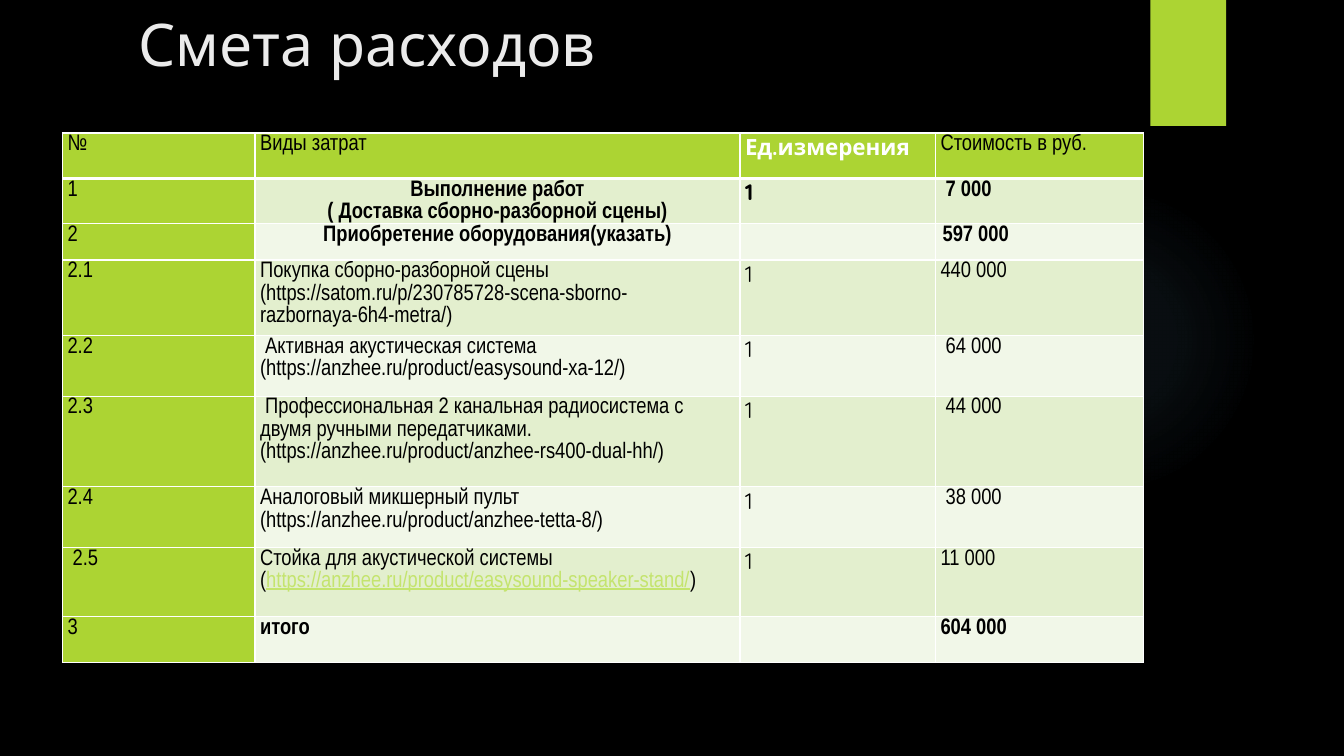
"""Builds the slide with the cost estimate for a portable stage."""
from dataclasses import dataclass
from typing import Any

from lxml import etree
from pptx import Presentation
from pptx import util as u
from pptx.dml.color import RGBColor
from pptx.enum import shapes, text
from pptx.oxml import ns, parse_xml

BLACK = RGBColor(0x00, 0x00, 0x00)
WHITE = RGBColor(0xFF, 0xFF, 0xFF)
TITLE_GREY = RGBColor(0xEB, 0xEB, 0xEB)
LIME = RGBColor(0xAC, 0xD4, 0x33)
LINK_LIME = RGBColor(0xC4, 0xE4, 0x6E)
BANDS = (RGBColor(0xE3, 0xEF, 0xCE), RGBColor(0xF1, 0xF7, 0xE8))
GLOW = RGBColor(0x7A, 0xC4, 0xF0)
GLOW_STOPS = ((0, 7), (36, 6), (69, 0))

WIDTH, HEIGHT = u.Inches(13.33), u.Inches(7.5)
COLUMNS = (14.33, 36.08, 14.55, 15.45)
NARROW, ROUND = "Arial Narrow", "Quicksand"


@dataclass(frozen=True)
class Area:
    """A place on the slide, in percent of its width and height."""

    left: float
    top: float
    width: float
    height: float

    def box(self) -> tuple[int, int, int, int]:
        """Return left, top, width and height as lengths."""
        return across(self.left), down(self.top), across(self.width), down(self.height)


@dataclass(frozen=True)
class Cost:
    """One row of the estimate, its height in percent of the slide."""

    height: float
    number: str
    purpose: str
    unit: str
    price: str
    bold: bool = False
    centred: bool = False
    inset: float = 0.38
    link: str = ""


HEADER = Cost(6, "№", "Виды затрат", "Ед.измерения", "Стоимость в руб.")
COSTS = (
    Cost(6, "1", "Выполнение работ\n( Доставка сборно-разборной сцены)", "1", " 7 000",
         bold=True, centred=True),
    Cost(4.8, "2", "Приобретение оборудования(указать)", "", "597 000",
         bold=True, centred=True, inset=0.53),
    Cost(10, "2.1", "Покупка сборно-разборной сцены\n"
         "(https://satom.ru/p/230785728-scena-sborno-razbornaya-6h4-metra/)", "1", "440 000"),
    Cost(8, "2.2", " Активная акустическая система "
         "(https://anzhee.ru/product/easysound-xa-12/)", "1", " 64 000"),
    Cost(12, "2.3", " Профессиональная 2 канальная радиосистема с двумя ручными "
         "передатчиками. (https://anzhee.ru/product/anzhee-rs400-dual-hh/)", "1", " 44 000"),
    Cost(8, "2.4", "Аналоговый микшерный пульт "
         "(https://anzhee.ru/product/anzhee-tetta-8/)", "1", " 38 000"),
    Cost(9.2, " 2.5", "Стойка для акустической системы\n"
         "(https://anzhee.ru/product/easysound-speaker-stand/)", "1", "11 000",
         link="https://anzhee.ru/product/easysound-speaker-stand/"),
    Cost(6, "3", "итого", "", "604 000", bold=True),
)
GLOW_AREA = Area(70.59, 24.4, 23.11, 41.07)
TAB_AREA = Area(85.6, 0, 5.63, 16.67)
TITLE_AREA = Area(9.53, 0.4, 70.67, 18.8)
ESTIMATE_AREA = Area(4.65, 17.6, sum(COLUMNS), sum(c.height for c in (HEADER, *COSTS)))


def across(percent: float) -> int:
    """Turn a share of the slide's width into a length."""
    return round(WIDTH * percent / 100)


def down(percent: float) -> int:
    """Turn a share of the slide's height into a length."""
    return round(HEIGHT * percent / 100)


def apply(target: Any, values: dict[str, Any]) -> None:
    """Set each named attribute on the target."""
    for name, value in values.items():
        setattr(target, name, value)


def add_run(paragraph: Any, words: str, color: RGBColor, **values: Any) -> None:
    """Add a run with its font values."""
    run = paragraph.add_run()
    run.text = words
    apply(run.font, values)
    run.font.color.rgb = color


def add_decor(slide: Any, kind: Any, area: Area) -> Any:
    """Add a lime shape without line or shadow."""
    decor = slide.shapes.add_shape(kind, *area.box())
    decor.shadow.inherit = False
    decor.fill.solid()
    decor.fill.fore_color.rgb = LIME
    decor.line.fill.background()
    return decor


def add_glow(slide: Any) -> None:
    """Add the faint round glow at the right."""
    glow = add_decor(slide, shapes.MSO_SHAPE.OVAL, GLOW_AREA)
    stops = "".join(
        f'<a:gs pos="{place * 1000}"><a:srgbClr val="{GLOW}">'
        f'<a:alpha val="{alpha * 1000}"/></a:srgbClr></a:gs>'
        for place, alpha in GLOW_STOPS)
    gradient = parse_xml(
        f'<a:gradFill {ns.nsdecls("a")}><a:gsLst>{stops}</a:gsLst><a:path path="circle">'
        '<a:fillToRect l="50000" t="50000" r="50000" b="50000"/></a:path></a:gradFill>')
    properties = glow.element.spPr
    properties.replace(properties.find(ns.qn("a:solidFill")), gradient)


def add_title(slide: Any) -> None:
    """Fill and place the title."""
    title = slide.shapes.title
    apply(title, dict(zip(("left", "top", "width", "height"), TITLE_AREA.box())))
    apply(title.text_frame, {"vertical_anchor": text.MSO_ANCHOR.TOP, "word_wrap": True})
    heading = title.text_frame.paragraphs[0]
    heading.alignment = text.PP_ALIGN.LEFT
    add_run(heading, "Смета расходов", TITLE_GREY, name=ROUND, size=u.Pt(42))


def add_borders(cell: Any, bottom: float) -> None:
    """Draw white lines round a cell."""
    properties = cell._tc.get_or_add_tcPr()
    for place, (side, points) in enumerate(
            {"lnL": 1, "lnR": 1, "lnT": 1, "lnB": bottom}.items()):
        line = etree.Element(ns.qn(f"a:{side}"), w=str(u.Pt(points)))
        fill = etree.SubElement(line, ns.qn("a:solidFill"))
        etree.SubElement(fill, ns.qn("a:srgbClr"), val=str(WHITE))
        properties.insert(place, line)


def fill_cell(cell: Any, cost: Cost, column: int, band: RGBColor) -> None:
    """Write and format one cell of the estimate."""
    is_header, is_unit = cost is HEADER, column == 2
    inset = across(cost.inset if column else HEADER.inset)
    apply(cell, {"margin_left": inset, "margin_right": inset,
                 "margin_top": 0, "margin_bottom": 0})
    cell.fill.solid()
    cell.fill.fore_color.rgb = band
    add_borders(cell, 3 if is_header else 1)
    color = WHITE if is_header and is_unit else BLACK
    font = {"name": ROUND if is_unit else NARROW, "size": u.Pt(16),
            "bold": is_unit if is_header else cost.bold and column > 0}
    words = (cost.number, cost.purpose, cost.unit, cost.price)[column]
    for index, line in enumerate(words.split("\n") if words else ()):
        frame = cell.text_frame
        paragraph = frame.add_paragraph() if index else frame.paragraphs[0]
        if not is_unit:
            paragraph.line_spacing = 1.07
        if cost.centred and column == 1:
            paragraph.alignment = text.PP_ALIGN.CENTER
        before, link, after = line.partition(cost.link) if cost.link else (line, "", "")
        add_run(paragraph, before, color, **font)
        if link:
            add_run(paragraph, link, LINK_LIME, underline=True, **font)
            add_run(paragraph, after, color, **font)


def add_estimate(slide: Any) -> None:
    """Add the table of costs."""
    rows = (HEADER, *COSTS)
    estimate = slide.shapes.add_table(len(rows), len(COLUMNS), *ESTIMATE_AREA.box()).table
    estimate.first_col = True
    for column, share in enumerate(COLUMNS):
        estimate.columns[column].width = across(share)
    for row, cost in enumerate(rows):
        estimate.rows[row].height = down(cost.height)
        for column in range(len(COLUMNS)):
            band = LIME if row == 0 or column == 0 else BANDS[(row - 1) % 2]
            fill_cell(estimate.cell(row, column), cost, column, band)


def main() -> None:
    """Build and save the presentation."""
    deck = Presentation()
    apply(deck, {"slide_width": WIDTH, "slide_height": HEIGHT})
    slide = deck.slides.add_slide(deck.slide_layouts[5])
    slide.background.fill.solid()
    slide.background.fill.fore_color.rgb = BLACK
    add_glow(slide)
    add_decor(slide, shapes.MSO_SHAPE.RECTANGLE, TAB_AREA)
    add_title(slide)
    add_estimate(slide)
    deck.save("out.pptx")


if __name__ == "__main__":
    main()
